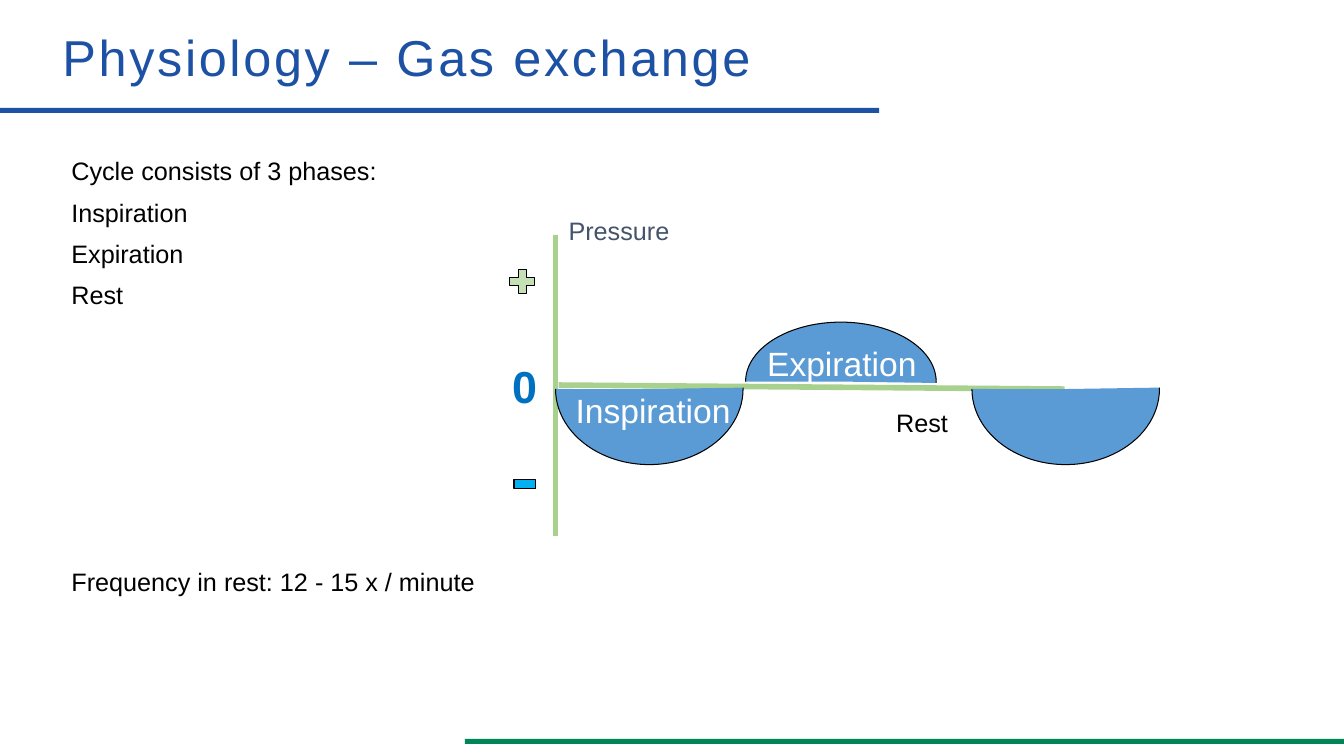
import pptx
import pptx.util
import pptx.dml.color
import pptx.enum.shapes
import pptx.enum.text
import pptx.oxml.ns
from lxml import etree

Inches = pptx.util.Inches
Pt = pptx.util.Pt
RGBColor = pptx.dml.color.RGBColor
Kind = pptx.enum.shapes.MSO_SHAPE

NAVY = RGBColor(0x1D, 0x51, 0xA4)
GREEN = RGBColor(0x00, 0x85, 0x57)
LEAF = RGBColor(0xA9, 0xD1, 0x8E)
PALE = RGBColor(0xC5, 0xE0, 0xB4)
BLUE = RGBColor(0x5B, 0x9B, 0xD5)
DEEP = RGBColor(0x00, 0x70, 0xC0)
SKY = RGBColor(0x00, 0xB0, 0xF0)
SLATE = RGBColor(0x44, 0x54, 0x6A)
BLACK = RGBColor(0, 0, 0)
WHITE = RGBColor(255, 255, 255)


class Board:
    font = "Arial"
    edge = Pt(0.75)

    def __init__(self, slide):
        self.slide = slide

    def shape(self, kind, box, fill, line=None):
        item = self.slide.shapes.add_shape(kind, *map(Inches, box))
        item.shadow.inherit = False
        item.fill.solid()
        item.fill.fore_color.rgb = fill
        if line is None:
            item.line.fill.background()
        else:
            item.line.color.rgb = line
            item.line.width = self.edge
        return item

    def arc(self, box, flip):
        item = self.shape(Kind.ARC, box, BLUE, BLACK)
        item.adjustments[0] = 162
        item.adjustments[1] = 54.504
        item.rotation = 270
        if flip:
            item._element.spPr.xfrm.set("flipH", "1")

    def axis(self, start, end):
        ends = map(Inches, start + end)
        item = self.slide.shapes.add_connector(
            pptx.enum.shapes.MSO_CONNECTOR.STRAIGHT, *ends)
        item.line.color.rgb = LEAF
        item.line.width = Pt(4)
        etree.SubElement(item._element.spPr, pptx.oxml.ns.qn("a:effectLst"))

    def text(self, lines, box, size, color, wrap=False, bold=False):
        item = self.slide.shapes.add_textbox(*map(Inches, box))
        frame = item.text_frame
        frame.text = "\n".join(lines)
        frame.word_wrap = wrap
        if not wrap:
            frame.auto_size = pptx.enum.text.MSO_AUTO_SIZE.SHAPE_TO_FIT_TEXT
        for para in frame.paragraphs:
            for run in para.runs:
                run.font.name = self.font
                run.font.size = Pt(size)
                run.font.bold = bold
                run.font.color.rgb = color
        return frame

    def title(self, words, box):
        frame = self.text([words], box, 36, NAVY, wrap=True)
        frame.margin_left = frame.margin_top = Inches(0.01)
        frame.margin_right = frame.margin_bottom = 0
        frame.paragraphs[0].runs[0].font._element.set("spc", "190")

    def body(self, lines, box):
        frame = self.text(lines, box, 18, BLACK, wrap=True)
        for rank, para in enumerate(frame.paragraphs):
            para.line_spacing = 0.9
            if rank:
                para.space_before = Pt(10)


def main():
    deck = pptx.Presentation()
    deck.slide_width = Inches(13.33)
    deck.slide_height = Inches(7.5)
    board = Board(deck.slides.add_slide(deck.slide_layouts[6]))

    board.shape(Kind.RECTANGLE, (0, 1.07, 8.72, 0.05), NAVY)
    board.shape(Kind.RECTANGLE, (4.61, 7.33, 8.72, 0.05), GREEN)
    board.title("Physiology – Gas exchange", (0.61, 0.25, 7.89, 0.62))
    board.body(["Cycle consists of 3 phases:", "Inspiration", "Expiration", "Rest"],
               (0.61, 1.53, 4.3, 1.7))
    board.body(["Frequency in rest: 12 - 15 x / minute"], (0.61, 5.6, 11.91, 0.4))

    board.axis((5.54, 3.82), (10.56, 3.86))
    board.axis((5.51, 2.33), (5.51, 5.32))
    for left in (5.69, 9.82):
        board.arc((left, 2.93, 1.5, 1.86), True)
    board.arc((7.75, 2.84, 1.18, 1.89), False)
    board.shape(Kind.MATH_PLUS, (5.01, 2.63, 0.34, 0.33), PALE, BLACK)
    board.shape(Kind.MATH_MINUS, (5.06, 4.61, 0.29, 0.39), SKY, BLACK)

    board.text(["0"], (4.98, 3.51, 0.45, 0.64), 32, DEEP, bold=True)
    for word, box, size, color in (
        ("Inspiration", (5.61, 3.82, 1.76, 0.5), 24, WHITE),
        ("Expiration", (7.51, 3.35, 1.91, 0.5), 24, WHITE),
        ("Rest", (8.79, 3.99, 0.72, 0.4), 18, BLACK),
        ("Pressure", (5.54, 2.09, 1.29, 0.4), 18, SLATE),
    ):
        board.text([word], box, size, color)

    deck.save("out.pptx")


if __name__ == "__main__":
    main()
